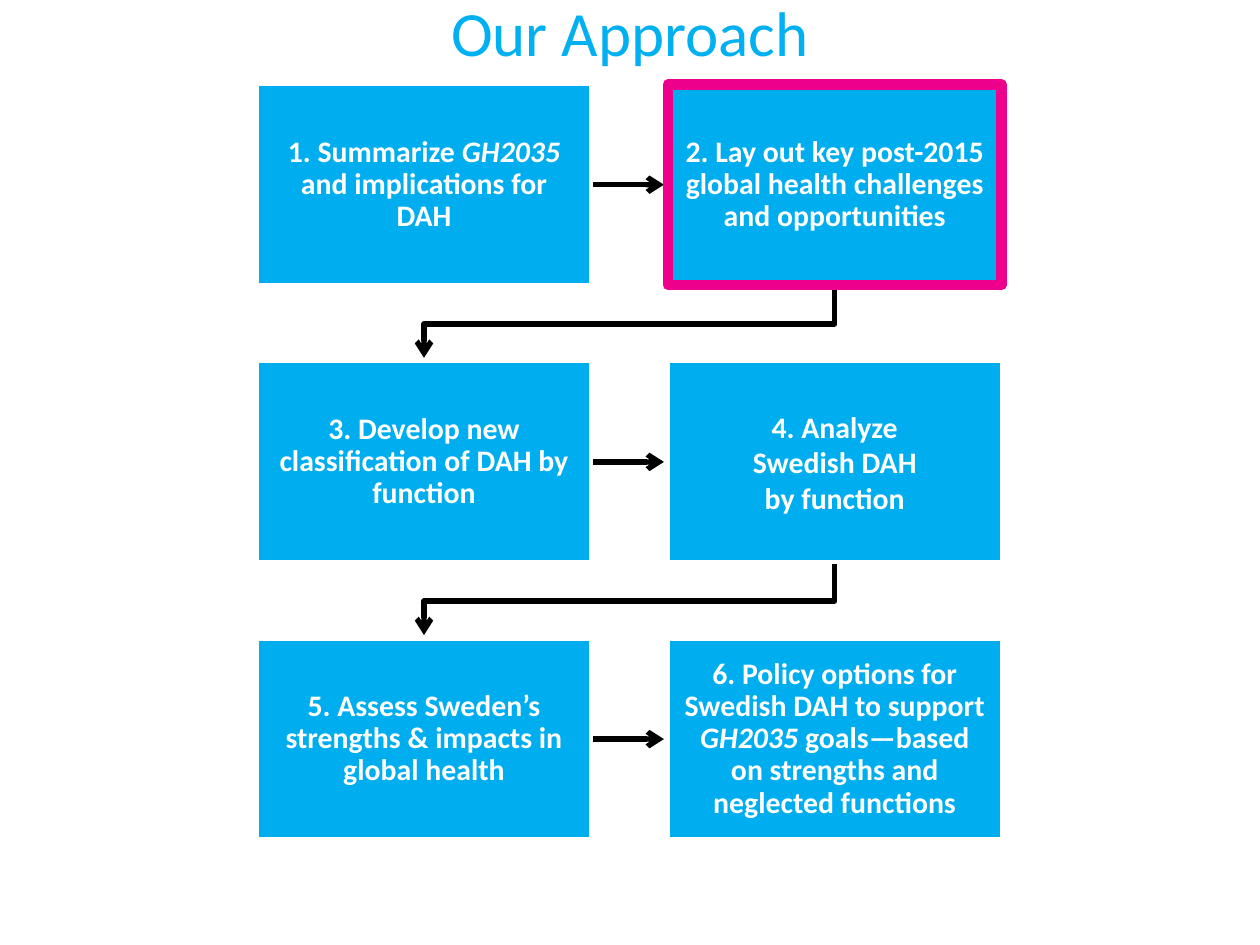
from lxml import etree
from pptx import Presentation
from pptx.dml.color import RGBColor
from pptx.enum.shapes import MSO_CONNECTOR as CONNECTOR, MSO_SHAPE as SHAPE
from pptx.enum.text import MSO_ANCHOR as ANCHOR, PP_ALIGN as ALIGN
from pptx.oxml.ns import qn
from pptx.util import Pt

TITLE = "Our Approach"
# Each step is a list of (text, italic) spans.
STEPS = [
    [("1. Summarize ", False), ("GH2035 ", True), ("and implications for DAH", False)],
    [("2. Lay out key post-2015 global health challenges and opportunities", False)],
    [("3. Develop new classification of DAH by function", False)],
    [("4. Analyze Swedish DAH by function", False)],
    [("5. Assess Sweden’s strengths & impacts in global health", False)],
    [("6. Policy options for Swedish DAH to support ", False), ("GH2035", True),
     (" goals—based on strengths and neglected functions", False)],
]
HIGHLIGHTED = 1
STEP_STYLE = {"margin": 9.6, "spacing": 0.9}
SPECIAL_STYLES = {3: {"margin": 45.7, "spacing": 1.0}}

TITLE_BLUE = RGBColor(0x00, 0xB0, 0xF0)
BOX_BLUE = RGBColor(0x00, 0xAE, 0xEF)
PINK = RGBColor(0xEC, 0x00, 0x8C)
WHITE = RGBColor(0xFF, 0xFF, 0xFF)
BLACK = RGBColor(0x00, 0x00, 0x00)

COLUMNS = 2
LEFT, TOP = 146.9, 48.3
BOX_W, BOX_H = 190.8, 114.5
STEP_X, STEP_Y = 234.7, 158.4
ARROW_GAP = 2.2
ELBOW_DROP = 22.3


def step_corner(index):
    row, column = divmod(index, COLUMNS)
    return LEFT + column * STEP_X, TOP + row * STEP_Y


def add_spans(para, spans, **font_format):
    para.alignment = ALIGN.CENTER
    for text, italic in spans:
        span = para.add_run()
        span.text = text
        span.font.color.rgb = font_format["color"]
        for name in ("size", "bold"):
            setattr(span.font, name, font_format[name])
        span.font.name = "Calibri"
        span.font.italic = italic


def style_arrow(arrow):
    arrow.line.color.rgb = BLACK
    arrow.line.width = Pt(3)
    outline = arrow.line._get_or_add_ln()
    etree.SubElement(outline, qn("a:round"))
    etree.SubElement(outline, qn("a:tailEnd"), type="arrow")


def add_side_arrow(page, index):
    x, y = step_corner(index)
    middle = y + BOX_H / 2
    arrow = page.shapes.add_connector(
        CONNECTOR.STRAIGHT, Pt(x + BOX_W), Pt(middle),
        Pt(x + STEP_X - ARROW_GAP), Pt(middle))
    style_arrow(arrow)
    etree.SubElement(arrow._element.spPr, qn("a:effectLst"))
    return arrow


def add_row_arrow(page, index):
    """Bent arrow from the end of one row to the start of the next."""
    x, y = step_corner(index)
    start_x, start_y = x + BOX_W / 2, y + BOX_H
    next_x, next_y = step_corner(index + 1)
    end_x, bend_y = next_x + BOX_W / 2, start_y + ELBOW_DROP
    builder = page.shapes.build_freeform(Pt(start_x), Pt(start_y))
    points = [(start_x, bend_y), (end_x, bend_y), (end_x, next_y - ARROW_GAP)]
    builder.add_line_segments([(Pt(px), Pt(py)) for px, py in points], close=False)
    arrow = builder.convert_to_shape()
    arrow.fill.background()
    arrow.shadow.inherit = False
    style_arrow(arrow)


def add_step(page, index, spans):
    x, y = step_corner(index)
    box = page.shapes.add_shape(SHAPE.RECTANGLE, Pt(x), Pt(y), Pt(BOX_W), Pt(BOX_H))
    box.shadow.inherit = False
    box.fill.solid()
    box.fill.fore_color.rgb = BOX_BLUE
    highlighted = index == HIGHLIGHTED
    box.line.color.rgb = PINK if highlighted else WHITE
    box.line.width = Pt(6 if highlighted else 2)
    etree.SubElement(box.line._get_or_add_ln(), qn("a:round"))

    style = SPECIAL_STYLES.get(index, STEP_STYLE)
    frame = box.text_frame
    frame.word_wrap = True
    frame.vertical_anchor = ANCHOR.MIDDLE
    frame.margin_left = frame.margin_right = Pt(style["margin"])
    frame.margin_top = frame.margin_bottom = Pt(STEP_STYLE["margin"])
    para = frame.paragraphs[0]
    para.line_spacing = style["spacing"]
    add_spans(para, spans, size=Pt(17), bold=True, color=WHITE)
    return box


def main():
    deck = Presentation()
    deck.slide_width, deck.slide_height = Pt(720), Pt(540)
    page = deck.slides.add_slide(deck.slide_layouts[6])

    title = page.shapes.add_textbox(Pt(54), Pt(5.8), Pt(612), Pt(24.5)).text_frame
    title.word_wrap = True
    title.vertical_anchor = ANCHOR.MIDDLE
    add_spans(title.paragraphs[0], [(TITLE, False)],
              size=Pt(36), bold=False, color=TITLE_BLUE)

    # Arrows go first so that the box outlines cover their ends.
    side_arrows = {}
    for index in range(len(STEPS) - 1):
        if (index + 1) % COLUMNS:
            side_arrows[index] = add_side_arrow(page, index)
        else:
            add_row_arrow(page, index)

    for index, spans in enumerate(STEPS):
        box = add_step(page, index, spans)
        if index in side_arrows:
            side_arrows[index].begin_connect(box, 3)

    deck.save("out.pptx")


if __name__ == "__main__":
    main()
